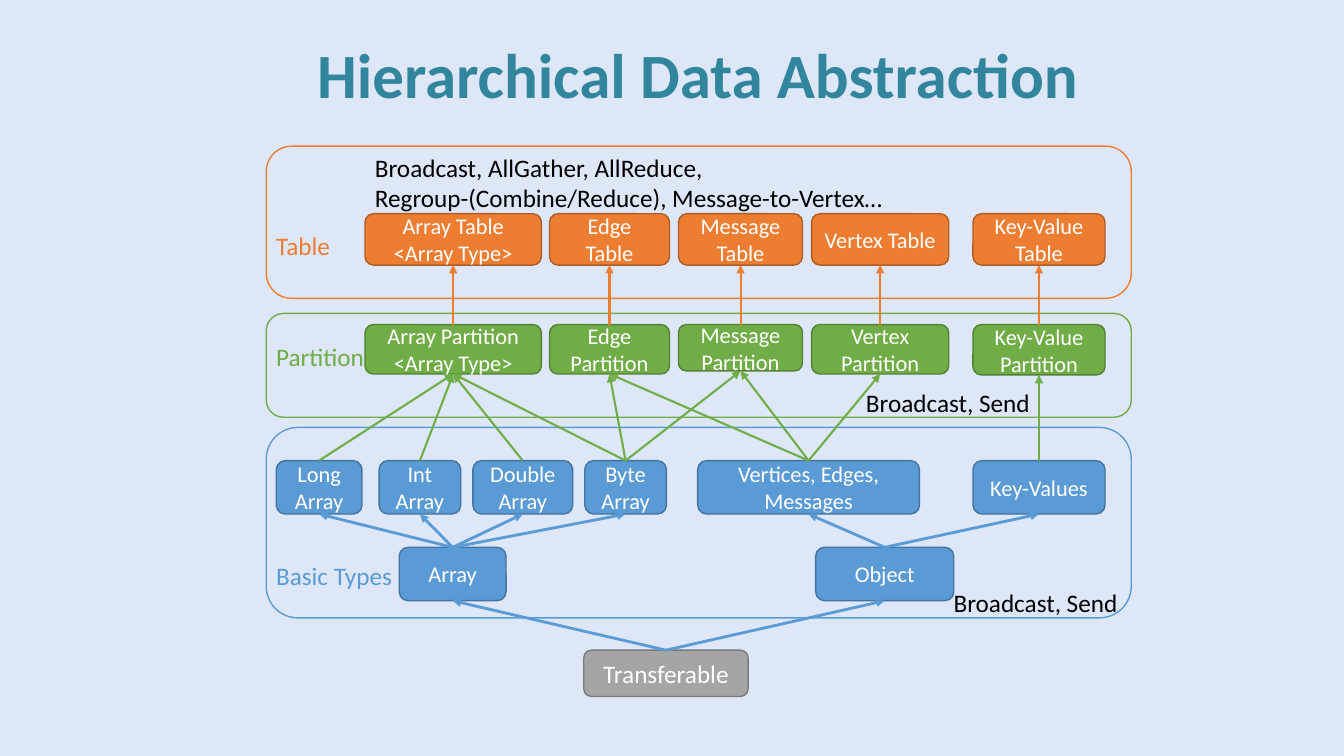
import pptx
import pptx.util
import pptx.dml.color
import pptx.enum.shapes
import pptx.enum.text
import pptx.oxml.ns
from lxml import etree

COLORS = {
    "back": "DEE7F8", "title": "31859C", "text": "000000", "white": "FFFFFF",
    "table": "ED7D31", "table_edge": "AF5C24",
    "part": "70AD47", "part_edge": "538035",
    "basic": "5B9BD5", "basic_edge": "43739E",
    "root": "A5A5A5", "root_edge": "7A7A7A",
}
FONT = "Calibri"
COLS, ROWS = 133.3, 75  # the slide as a grid of square cells
CELL = pptx.util.Inches(0.1)

# Left and width of the columns shared by tables and partitions, from the band's left
SLOTS = [(9.8, 17.5), (28.1, 11.9), (40.9, 12.3), (54.1, 13.6), (70.1, 13.1)]
TABLES = ["Array Table <Array Type>", "Edge\nTable", "Message Table",
          "Vertex Table", "Key-Value Table"]
PARTS = ["Array Partition\v<Array Type>", "Edge Partition", "Message Partition",
         "Vertex Partition", "Key-Value Partition"]
# Name, left and width of the basic types, from the band's left
TYPES = [("Long Array", 1, 8.5), ("Int Array", 11.2, 8.1),
         ("Double Array", 20.5, 9.9), ("Byte Array", 31.6, 8.1),
         ("Vertices, Edges, Messages", 42.8, 22), ("Key-Values", 70.1, 13.1)]
KINDS = [("Array", 13.2, 10.6), ("Object", 54.5, 13.7)]


def cells(*sizes):
    return [round(size * CELL) for size in sizes]


def color(name):
    return pptx.dml.color.RGBColor.from_string(COLORS[name])


def write(frame, text, size, ink, align, bold=False):
    """Lines split at newline are paragraphs; a vertical tab is a line break."""
    frame.word_wrap = True
    for i, line in enumerate(text.split("\n")):
        para = frame.paragraphs[0] if i == 0 else frame.add_paragraph()
        para.alignment = align
        for j, piece in enumerate(line.split("\v")):
            if j:
                para.add_line_break()
            run = para.add_run()
            run.text = piece
            run.font.name = FONT
            run.font.size = pptx.util.Pt(size)
            run.font.bold = bold
            run.font.color.rgb = color(ink)


def label(slide, box, text, ink="text"):
    shape = slide.shapes.add_textbox(*cells(*box))
    write(shape.text_frame, text, 18, ink, pptx.enum.text.PP_ALIGN.LEFT)


def panel(slide, box, edge, fill=None):
    kind = pptx.enum.shapes.MSO_SHAPE.ROUNDED_RECTANGLE
    shape = slide.shapes.add_shape(kind, *cells(*box))
    shape.shadow.inherit = False
    if fill:
        shape.fill.solid()
        shape.fill.fore_color.rgb = color(fill)
    else:
        shape.fill.background()
    shape.line.color.rgb = color(edge)
    shape.line.width = pptx.util.Pt(1)
    return shape


def node(slide, box, text, hue, size=16):
    shape = panel(slide, box, hue + "_edge", hue)
    shape.text_frame.vertical_anchor = pptx.enum.text.MSO_ANCHOR.MIDDLE
    write(shape.text_frame, text, size, "white", pptx.enum.text.PP_ALIGN.CENTER)
    return shape


def arrow(slide, low, high, hue, width):
    """Arrow from the top of one node to the bottom of another."""
    kind = pptx.enum.shapes.MSO_CONNECTOR.STRAIGHT
    line = slide.shapes.add_connector(kind, 0, 0, 0, 0)
    line.begin_connect(low, 0)
    line.end_connect(high, 2)
    line.line.color.rgb = color(hue)
    line.line.width = pptx.util.Pt(width)
    tag = pptx.oxml.ns.qn
    etree.SubElement(line.line._get_or_add_ln(), tag("a:tailEnd"), type="triangle")
    etree.SubElement(line._element.spPr, tag("a:effectLst"))


def heading(slide, box):
    shape = slide.shapes.add_textbox(*cells(*box))
    shape.text_frame.vertical_anchor = pptx.enum.text.MSO_ANCHOR.BOTTOM
    write(shape.text_frame, "Hierarchical Data Abstraction", 45, "title",
          pptx.enum.text.PP_ALIGN.CENTER, True)


def tables(slide, box):
    left, top, wide, high = box
    panel(slide, box, "table")
    nodes = [node(slide, (left + x, top + 6.7, w, 5.1), name, "table")
             for name, (x, w) in zip(TABLES, SLOTS)]
    label(slide, (left, top + 7.9, 11.7, 4), "Table", "table")
    label(slide, (left + 9.8, top + 0.1, 75.8, 7.1),
          "Broadcast, AllGather, AllReduce,\v"
          "Regroup-(Combine/Reduce), Message-to-Vertex…")
    return nodes


def parts(slide, box):
    left, top, wide, high = box
    panel(slide, box, "part")
    tall = [4.9, 4.9, 4.6, 4.9, 5]
    nodes = [node(slide, (left + x, top + 1.1, w, h), name, "part")
             for name, (x, w), h in zip(PARTS, SLOTS, tall)]
    label(slide, (left, top + 2.3, 11.7, 4), "Partition", "part")
    label(slide, (left + 58.5, top + 6.8, 19.9, 4), "Broadcast, Send")
    return nodes


def basics(slide, box):
    left, top, wide, high = box
    panel(slide, box, "basic")
    types, kinds = [
        [node(slide, (left + x, top + drop, w, 5.3), name, "basic")
         for name, x, w in group]
        for group, drop in ((TYPES, 3.3), (KINDS, 11.9))]
    label(slide, (left, top + 12.7, 13.7, 4), "Basic Types", "basic")
    label(slide, (left + 67.2, top + 15.4, 19.4, 4), "Broadcast, Send")
    return types, kinds


def main():
    deck = pptx.Presentation()
    deck.slide_width, deck.slide_height = cells(COLS, ROWS)
    slide = deck.slides.add_slide(deck.slide_layouts[6])
    slide.background.fill.solid()
    slide.background.fill.fore_color.rgb = color("back")

    # Bands, top to bottom
    heading(slide, (16.6, 3.1, 105.2, 8.4))
    tops = tables(slide, (26.4, 14.5, 85.8, 15.1))
    mids = parts(slide, (26.4, 31.1, 85.8, 10.3))
    types, kinds = basics(slide, (26.4, 42.4, 85.8, 18.9))
    root = node(slide, (57.9, 64.5, 16.3, 4.6), "Transferable", "root", 18)

    # Arrows from each level to the one above
    for low, high in zip(mids, tops):
        arrow(slide, low, high, "table", 1.5)
    uses = [[0], [0], [0], [0, 1, 2], [1, 2, 3], [4]]
    for low, goals in zip(types, uses):
        for goal in goals:
            arrow(slide, low, mids[goal], "part", 1.5)
    for kind, group in zip(kinds, (types[:4], types[4:])):
        arrow(slide, root, kind, "basic", 2)
        for high in group:
            arrow(slide, kind, high, "basic", 2)

    deck.save("out.pptx")


if __name__ == "__main__":
    main()
